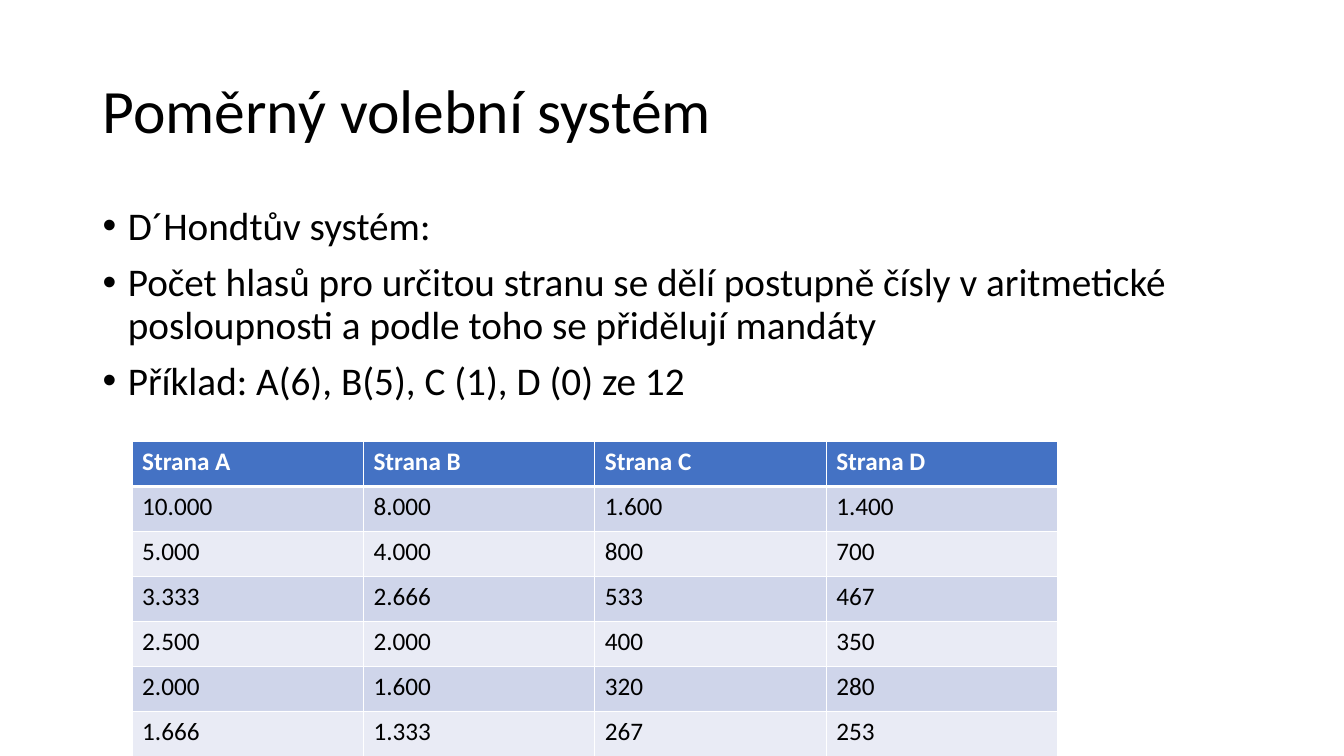
"""Build the slide on the proportional electoral system with a D'Hondt table."""
from lxml import etree
from pptx import Presentation
from pptx import util as u
from pptx.dml.color import RGBColor
from pptx.enum import text
from pptx.oxml import ns

BLACK, WHITE, BLUE = "000000", "FFFFFF", "4472C4"
BANDS = ["CFD5EA", "E9EBF5"]


def add_run(p, words, size, color, bold=False):
    r = p.add_run()
    r.text = words
    r.font.name = "Calibri"
    r.font.size = u.Pt(size)
    r.font.bold = bold
    r.font.color.rgb = RGBColor.from_string(color)


def add_border(cell, side, points):
    ln = etree.SubElement(cell._tc.get_or_add_tcPr(), ns.qn(f"a:ln{side}"), w=str(u.Pt(points)))
    fill = etree.SubElement(ln, ns.qn("a:solidFill"))
    etree.SubElement(fill, ns.qn("a:srgbClr"), val=WHITE)


prs = Presentation()
prs.slide_width, prs.slide_height = u.Inches(13.33), u.Inches(7.5)
s = prs.slides.add_slide(prs.slide_layouts[6])
left, width = u.Inches(0.92), u.Inches(11.5)

sp = s.shapes.add_textbox(left, u.Inches(0.4), width, u.Inches(1.45))
tf = sp.text_frame
tf.word_wrap = True
tf.vertical_anchor = text.MSO_ANCHOR.MIDDLE
p = tf.paragraphs[0]
p.line_spacing = 0.9
add_run(p, "Poměrný volební systém", 44, BLACK)

bullets = [
    "D´Hondtův systém:",
    "Počet hlasů pro určitou stranu se dělí postupně čísly v aritmetické "
    "posloupnosti a podle toho se přidělují mandáty",
    "Příklad: A(6), B(5), C (1), D (0) ze 12",
]
sp = s.shapes.add_textbox(left, u.Inches(2), width, u.Inches(4.34))
tf = sp.text_frame
tf.word_wrap = True
for i, words in enumerate(bullets):
    p = tf.paragraphs[0] if i == 0 else tf.add_paragraph()
    p.line_spacing = 0.9
    p.space_before = u.Pt(10 if i else 0)
    pPr = p._p.get_or_add_pPr()
    pPr.set("marL", str(u.Inches(0.25)))
    pPr.set("indent", str(-u.Inches(0.25)))
    etree.SubElement(pPr, ns.qn("a:buFont"), typeface="Arial")
    etree.SubElement(pPr, ns.qn("a:buChar"), char="•")
    add_run(p, words, 28, BLACK)

rows = [
    ["Strana A", "Strana B", "Strana C", "Strana D"],
    ["10.000", "8.000", "1.600", "1.400"],
    ["5.000", "4.000", "800", "700"],
    ["3.333", "2.666", "533", "467"],
    ["2.500", "2.000", "400", "350"],
    ["2.000", "1.600", "320", "280"],
    ["1.666", "1.333", "267", "253"],
]
n_rows, n_cols = len(rows), len(rows[0])
table = s.shapes.add_table(n_rows, n_cols, u.Inches(1.31), u.Inches(4.38),
                           u.Inches(9.18), u.Inches(3.13)).table
for i, row in enumerate(rows):
    header, last = i == 0, i == n_rows - 1
    for j, words in enumerate(row):
        cell = table.cell(i, j)
        if j == 0:
            add_border(cell, "L", 1)
        if j == n_cols - 1:
            add_border(cell, "R", 1)
        if header:
            add_border(cell, "T", 1)
        if header or last:
            add_border(cell, "B", 3 if header else 1)
        cell.fill.solid()
        cell.fill.fore_color.rgb = RGBColor.from_string(BLUE if header else BANDS[(i - 1) % 2])
        add_run(cell.text_frame.paragraphs[0], words, 18, WHITE if header else BLACK, header)

prs.save("out.pptx")
